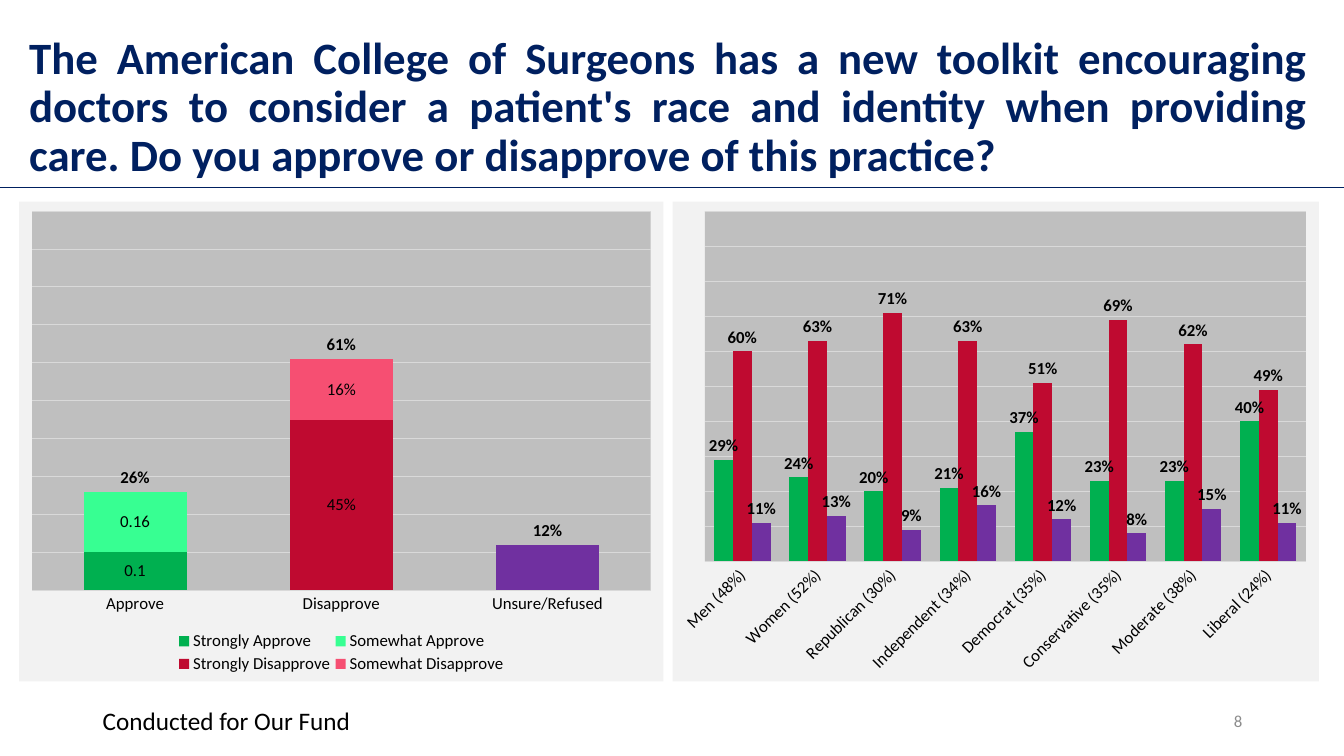
import pptx
import pptx.util
import pptx.dml.color
import pptx.chart.data
import pptx.enum.chart
import pptx.enum.shapes
import pptx.enum.text
import pptx.oxml
import pptx.oxml.ns
import lxml.etree

Inches, Pt = pptx.util.Inches, pptx.util.Pt
KINDS = pptx.enum.chart.XL_CHART_TYPE
SPOTS = pptx.enum.chart.XL_LABEL_POSITION
ALIGN = pptx.enum.text.PP_ALIGN
ANCHOR = pptx.enum.text.MSO_ANCHOR
FONT = "Calibri"
NAVY, BLACK, GRAY, RULE = "002060", "000000", "8C8C8C", "D9D9D9"
PANEL, PLOT = "F2F2F2", "BFBFBF"
GREEN, RED, PURPLE = "00B050", "BF0A30", "7030A0"


def color(code):
    return pptx.dml.color.RGBColor.from_string(code)


def style(font, size, code=BLACK, bold=False):
    font.name, font.size, font.bold = FONT, Pt(size), bold
    font.color.rgb = color(code)


def stroke(line, code, width):
    line.color.rgb = color(code)
    line.width = Pt(width)


def write(slide, box, text, size, code=BLACK, bold=False,
          align=ALIGN.LEFT, anchor=ANCHOR.TOP, space=1.0):
    frame = slide.shapes.add_textbox(*map(Inches, box)).text_frame
    frame.word_wrap = True
    frame.vertical_anchor = anchor
    par = frame.paragraphs[0]
    par.alignment, par.line_spacing = align, space
    run = par.add_run()
    run.text = text
    style(run.font, size, code, bold)


# Chart XML helpers
def node(body):
    space = pptx.oxml.ns.nsdecls("c", "a")
    return pptx.oxml.parse_xml(body.replace(">", f" {space}>", 1))


def fill(code):
    return node(f'<c:spPr><a:solidFill><a:srgbClr val="{code}"/>'
                '</a:solidFill><a:ln><a:noFill/></a:ln></c:spPr>')


def layout(area, inner=False):
    target = '<c:layoutTarget val="inner"/>' if inner else ""
    modes = "".join(f'<c:{key}Mode val="edge"/>' for key in "xy")
    sizes = "".join(f'<c:{key} val="{val}"/>' for key, val in zip("xywh", area))
    return node(f"<c:layout><c:manualLayout>{target}{modes}{sizes}"
                "</c:manualLayout></c:layout>")


def clear(parent, tag):
    for old in parent.findall(pptx.oxml.ns.qn(tag)):
        parent.remove(old)


def draw_chart(slide, box, kind, cats, rows, area, overlap=0):
    """Each row is name, values, fill, label spot, label format, bold."""
    data = pptx.chart.data.CategoryChartData()
    data.categories = cats
    for name, vals, *_ in rows:
        data.add_series(name, vals)
    chart = slide.shapes.add_chart(kind, *map(Inches, box), data).chart
    chart.has_title = chart.has_legend = False
    style(chart.font, 10)

    # Axes
    cat, val = chart.category_axis, chart.value_axis
    style(cat.tick_labels.font, 12)
    cat.major_tick_mark = pptx.enum.chart.XL_TICK_MARK.NONE
    stroke(cat.format.line, RULE, 0.75)
    val.visible = False
    val.minimum_scale, val.maximum_scale = 0, 1
    val.has_major_gridlines = True
    stroke(val.major_gridlines.format.line, RULE, 0.75)

    # Columns and labels
    plot = chart.plots[0]
    plot.gap_width, plot.overlap = 100, overlap
    plot.vary_by_categories = False
    for series, (_, _, code, spot, form, bold) in zip(plot.series, rows):
        if code:
            series.format.fill.solid()
            series.format.fill.fore_color.rgb = color(code)
        else:
            series.format.fill.background()
        if spot is not None:
            labels = series.data_labels
            labels.show_value, labels.position = True, spot
            labels.number_format = form
            labels.number_format_is_linked = False
            style(labels.font, 12, bold=bold)

    # Backgrounds and plot position
    root = chart.element.find(pptx.oxml.ns.qn("c:chart"))
    root.addnext(fill(PANEL))
    region = root.find(pptx.oxml.ns.qn("c:plotArea"))
    clear(region, "c:layout")
    region.insert(0, layout(area, inner=True))
    region.append(fill(PLOT))
    return chart


def draw_total(slide, box):
    cats = ["Approve", "Disapprove", "Unsure/Refused"]
    mid = SPOTS.CENTER
    rows = [
        ("Strongly Approve", [0.1, None, None], GREEN, mid, "General", False),
        ("Somewhat Approve", [0.16, None, None], "37FF92", mid, "General", False),
        ("Strongly Disapprove", [None, 0.45, None], RED, mid, "0%", False),
        ("Somewhat Disapprove", [None, 0.16, None], "F64F72", mid, "0%", False),
        ("Series 5", [None, None, 0.12], PURPLE, None, None, False),
        ("Series 6", [0.26, 0.61, 0.12], None, SPOTS.INSIDE_BASE, "0%", True),
    ]
    chart = draw_chart(slide, box, KINDS.COLUMN_STACKED, cats, rows,
                       (0.02, 0.02, 0.96, 0.79), overlap=100)

    # Legend without the last two series
    chart.has_legend = True
    legend = chart.legend
    legend.position = pptx.enum.chart.XL_LEGEND_POSITION.BOTTOM
    legend.include_in_layout = False
    style(legend.font, 12)
    key = chart.element.find(".//" + pptx.oxml.ns.qn("c:legend"))
    clear(key, "c:layout")
    key.insert(1, layout((0.24, 0.89, 0.52, 0.1)))
    for index in (5, 4):
        key.insert(1, node(f'<c:legendEntry><c:idx val="{index}"/>'
                           '<c:delete val="1"/></c:legendEntry>'))


def draw_groups(slide, box):
    cats = ["Men (48%)", "Women (52%)", "Republican (30%)",
            "Independent (34%)", "Democrat (35%)", "Conservative (35%)",
            "Moderate (38%)", "Liberal (24%)"]
    vals = [
        [0.29, 0.24, 0.2, 0.21, 0.37, 0.23, 0.23, 0.4],
        [0.6, 0.63, 0.71, 0.63, 0.51, 0.69, 0.62, 0.49],
        [0.11, 0.13, 0.09, 0.16, 0.12, 0.08, 0.15, 0.11],
    ]
    rows = [(f"Series {num}", val, code, SPOTS.OUTSIDE_END, "0%", True)
            for num, (val, code) in enumerate(zip(vals, (GREEN, RED, PURPLE)), 1)]
    chart = draw_chart(slide, box, KINDS.COLUMN_CLUSTERED, cats, rows,
                       (0.05, 0.02, 0.93, 0.73))
    # Slanted category names
    names = chart.element.find(".//" + pptx.oxml.ns.qn("c:catAx"))
    names.find(".//" + pptx.oxml.ns.qn("a:bodyPr")).set("rot", "-2700000")


def draw_head(slide, box):
    write(slide, box,
          "The American College of Surgeons has a new toolkit encouraging "
          "doctors to consider a patient's race and identity when providing "
          "care. Do you approve or disapprove of this practice?",
          32, NAVY, True, ALIGN.JUSTIFY, ANCHOR.MIDDLE, 0.9)
    base = Inches(box[1] + box[3] + 0.06)
    rule = slide.shapes.add_connector(
        pptx.enum.shapes.MSO_CONNECTOR.STRAIGHT, 0, base, Inches(13.33), base)
    stroke(rule.line, NAVY, 0.5)
    props = rule.element.find(pptx.oxml.ns.qn("p:spPr"))
    lxml.etree.SubElement(props, pptx.oxml.ns.qn("a:effectLst"))


def draw_foot(slide, box):
    left, top, width, height = box
    write(slide, (left, top, 3, height), "Conducted for Our Fund", 18)
    write(slide, (left + width - 3, top, 3, height), "8", 12, GRAY,
          align=ALIGN.RIGHT, anchor=ANCHOR.MIDDLE)


def main():
    deck = pptx.Presentation()
    deck.slide_width, deck.slide_height = Inches(13.33), Inches(7.5)
    slide = deck.slides.add_slide(deck.slide_layouts[6])
    draw_head(slide, (0.19, 0.35, 12.88, 1.45))
    draw_groups(slide, (6.67, 2, 6.41, 4.76))
    draw_total(slide, (0.19, 2, 6.39, 4.76))
    draw_foot(slide, (0.92, 6.95, 11.5, 0.4))
    deck.save("out.pptx")


if __name__ == "__main__":
    main()
